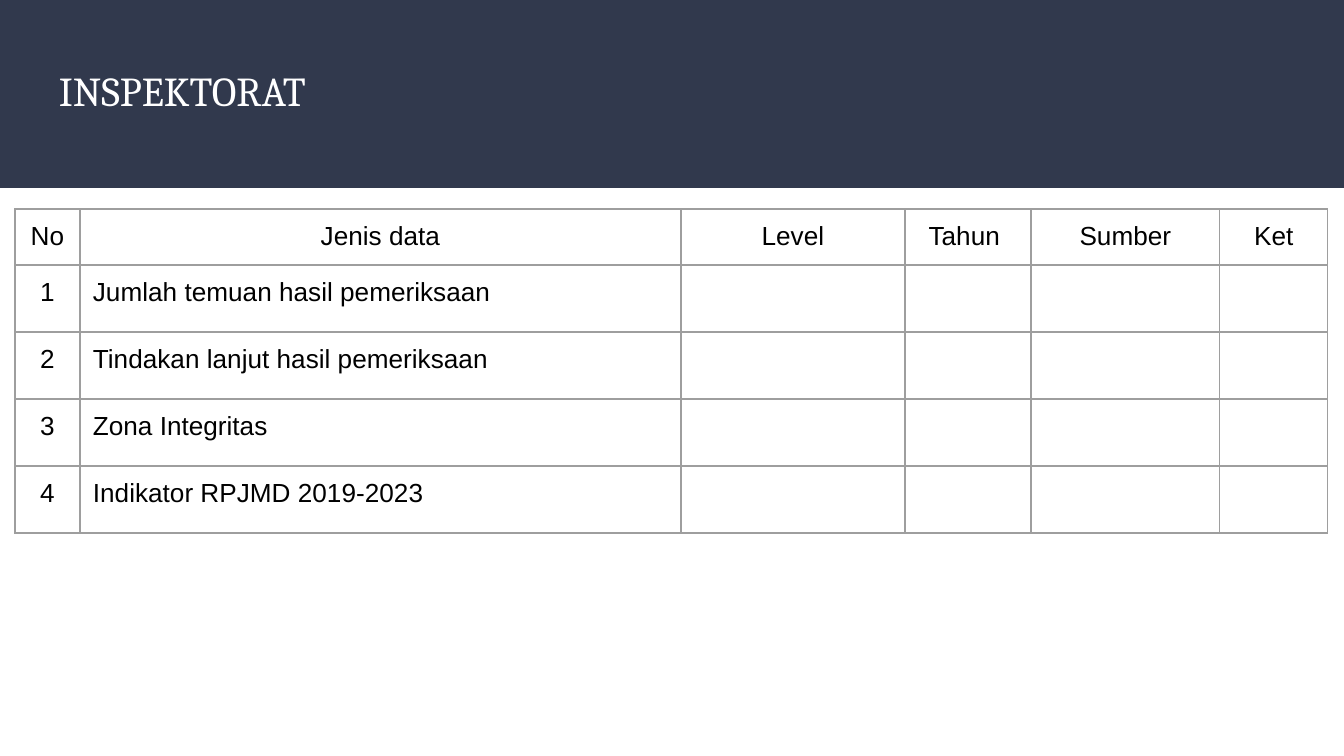
import pptx
import pptx.dml.color
import pptx.enum.shapes
import pptx.enum.text
import pptx.oxml
import pptx.oxml.ns
import pptx.util

PX = 914400 / 134.4
PAD = 13
HEADS = ["No", "Jenis data", "Level", "Tahun ", "Sumber", "Ket"]
ITEMS = [
    "Jumlah temuan hasil pemeriksaan",
    "Tindakan lanjut hasil pemeriksaan",
    "Zona Integritas",
    "Indikator RPJMD 2019-2023",
]
COLS = [65, 601, 224, 126, 189, 108]
ALIGN = pptx.enum.text.PP_ALIGN


def emu(px):
    """Turn px into EMU."""
    return pptx.util.Emu(round(px * PX))


def color(code):
    """Turn a hex string into a colour."""
    return pptx.dml.color.RGBColor.from_string(code)


def style(para, name, size, code, align):
    """Set the font and alignment of a paragraph."""
    para.font.name = name
    para.font.size = pptx.util.Pt(size)
    para.font.color.rgb = color(code)
    para.alignment = align


def inset(part):
    """Give a cell or text frame equal margins."""
    part.margin_left = part.margin_right = emu(PAD)
    part.margin_top = part.margin_bottom = emu(PAD)


def border(cell, code, width):
    """Draw a line on all four sides of a cell."""
    props = cell._tc.get_or_add_tcPr()
    space = pptx.oxml.ns.nsdecls("a")
    for spot, side in enumerate(("lnL", "lnR", "lnT", "lnB")):
        line = pptx.oxml.parse_xml(
            f'<a:{side} {space} w="{pptx.util.Pt(width)}"><a:solidFill>'
            f'<a:srgbClr val="{code}"/></a:solidFill></a:{side}>'
        )
        props.insert(spot, line)


def header(slide, left, top, width, height):
    """Place the dark band and the title on it."""
    kind = pptx.enum.shapes.MSO_SHAPE.RECTANGLE
    band = slide.shapes.add_shape(kind, emu(left), emu(top), emu(width), emu(height))
    band.shadow.inherit = False
    band.fill.solid()
    band.fill.fore_color.rgb = color("31394D")
    band.line.fill.background()
    title = slide.shapes.title
    title.element.addprevious(band.element)
    title.left, title.top = emu(left + 46), emu(top + 52)
    title.width, title.height = emu(width - 92), emu(92)
    frame = title.text_frame
    frame.text = "INSPEKTORAT"
    frame.word_wrap = True
    frame.auto_size = pptx.enum.text.MSO_AUTO_SIZE.NONE
    frame.vertical_anchor = pptx.enum.text.MSO_ANCHOR.TOP
    inset(frame)
    style(frame.paragraphs[0], "Cambria", 22, "FFFFFF", ALIGN.LEFT)


def grid(slide, left, top, head, step):
    """Place the data table with its heading row and numbered items."""
    blank = [""] * (len(HEADS) - 2)
    data = [HEADS] + [[str(num), item] + blank for num, item in enumerate(ITEMS, 1)]
    tall = head + step * len(ITEMS)
    frame = slide.shapes.add_table(
        len(data), len(COLS), emu(left), emu(top), emu(sum(COLS)), emu(tall)
    )
    table = frame.table
    table.first_row = table.horz_banding = False
    for col, width in zip(table.columns, COLS):
        col.width = emu(width)
    for r, texts in enumerate(data):
        table.rows[r].height = emu(step if r else head)
        for c, text in enumerate(texts):
            cell = table.cell(r, c)
            cell.fill.background()
            border(cell, "9E9E9E", 0.75)
            inset(cell)
            if text:
                cell.text = text
                align = ALIGN.LEFT if r and c == 1 else ALIGN.CENTER
                style(cell.text_frame.paragraphs[0], "Arial", 14, "000000", align)


def main():
    """Build and save the slide."""
    deck = pptx.Presentation()
    deck.slide_width, deck.slide_height = emu(1344), emu(756)
    slide = deck.slides.add_slide(deck.slide_layouts[5])
    header(slide, 0, 0, 1344, 188)
    grid(slide, 15, 209, 56, 64)
    deck.save("out.pptx")


if __name__ == "__main__":
    main()
